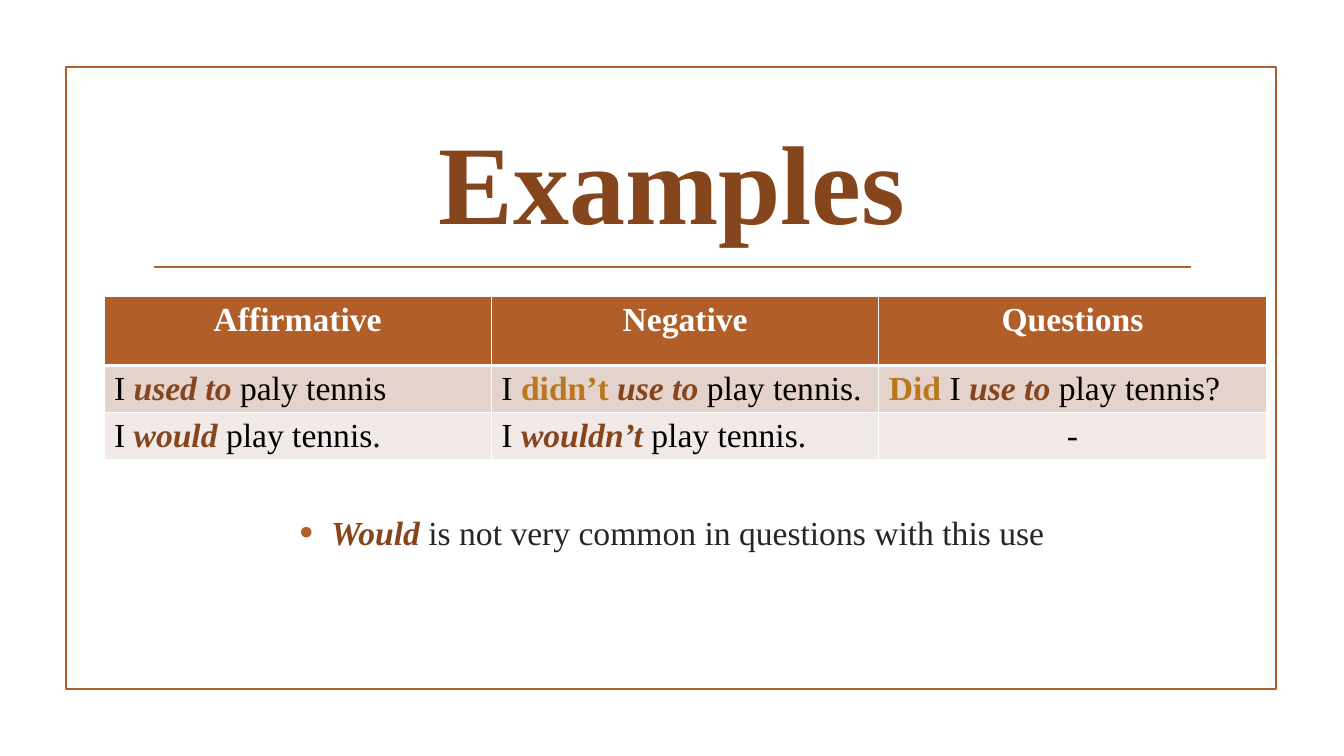
from dataclasses import dataclass

from lxml.etree import SubElement
from pptx import Presentation
from pptx.dml.color import RGBColor
from pptx.enum.shapes import MSO_CONNECTOR, MSO_SHAPE
from pptx.enum.text import MSO_ANCHOR, PP_ALIGN
from pptx.oxml.ns import qn
from pptx.util import Emu, Pt


@dataclass(frozen=True)
class Theme:
    """Colours, font and sizes of the slide."""
    accent: str = "B15E28"
    verb: str = "85461E"
    auxiliary: str = "BA781E"
    plain: str = "000000"
    note: str = "262626"
    white: str = "FFFFFF"
    bands: tuple = ("E4D2CD", "F2EAE8")
    font: str = "Times New Roman"
    title_size: int = 80
    text_size: int = 24
    line_width: float = 1.25
    border_width: int = 1
    header_border_width: int = 3


THEME = Theme()
PLAIN = (THEME.plain, False, False)
VERB = (THEME.verb, True, True)
AUXILIARY = (THEME.auxiliary, True, False)
NOTE = (THEME.note, False, False)

HEADINGS = ("Affirmative", "Negative", "Questions")
EXAMPLES = (
    (
        (("I ", PLAIN), ("used to ", VERB), ("paly tennis", PLAIN)),
        (("I ", PLAIN), ("didn’t ", AUXILIARY), ("use to ", VERB), ("play tennis.", PLAIN)),
        (("Did", AUXILIARY), (" I ", PLAIN), ("use to ", VERB), ("play tennis?", PLAIN)),
    ),
    (
        (("I ", PLAIN), ("would", VERB), (" play tennis.", PLAIN)),
        (("I", PLAIN), (" wouldn’t ", VERB), ("play tennis.", PLAIN)),
        (("-", PLAIN),),
    ),
)
REMARK = (("Would", VERB), (" is not very common in questions with this use", NOTE))


def px(length):
    """Turn px into EMU."""
    return Emu(length * 9525)


def rgb(code):
    """Return the colour for a hex code."""
    return RGBColor.from_string(code)


def set_font(paragraph, size, color=None, bold=None):
    """Set the font shared by a whole paragraph."""
    paragraph.font.name = THEME.font
    paragraph.font.size = Pt(size)
    paragraph.font.bold = bold
    if color:
        paragraph.font.color.rgb = rgb(color)


def write_phrases(paragraph, phrases):
    """Write phrases with their own colour, weight and slant."""
    set_font(paragraph, THEME.text_size)
    for words, (color, bold, italic) in phrases:
        run = paragraph.add_run()
        run.text = words
        run.font.color.rgb = rgb(color)
        run.font.bold = bold
        run.font.italic = italic


def add_bullet(paragraph, indent):
    """Give a paragraph a hanging accent bullet."""
    properties = paragraph._p.get_or_add_pPr()
    properties.set("marL", str(px(indent)))
    properties.set("indent", str(-px(indent)))
    bullet_color = SubElement(properties, qn("a:buClr"))
    SubElement(bullet_color, qn("a:srgbClr"), val=THEME.accent)
    SubElement(properties, qn("a:buSzPct"), val="115000")
    SubElement(properties, qn("a:buFont"), typeface="Arial")
    SubElement(properties, qn("a:buChar"), char="•")


def style_cell(cell, fill, top, bottom):
    """Set the borders and the fill of a table cell."""
    properties = cell._tc.get_or_add_tcPr()
    side = THEME.border_width
    for tag, width in (("a:lnL", side), ("a:lnR", side), ("a:lnT", top), ("a:lnB", bottom)):
        border = SubElement(properties, qn(tag), w=str(Pt(width)))
        border_fill = SubElement(border, qn("a:solidFill"))
        SubElement(border_fill, qn("a:srgbClr"), val=THEME.white)
    cell.fill.solid()
    cell.fill.fore_color.rgb = rgb(fill)


def draw_frame(slide, left, top, width, height):
    """Draw the border and the rule under the title."""
    frame = slide.shapes.add_shape(
        MSO_SHAPE.RECTANGLE, px(left), px(top), px(width), px(height))
    frame.shadow.inherit = False
    frame.fill.background()
    rule_y = px(top + 190)
    rule = slide.shapes.add_connector(
        MSO_CONNECTOR.STRAIGHT, px(left + 84), rule_y, px(left + width - 81), rule_y)
    SubElement(rule._element.spPr, qn("a:effectLst"))
    for outline in (frame.line, rule.line):
        outline.color.rgb = rgb(THEME.accent)
        outline.width = Pt(THEME.line_width)


def draw_title(slide, left, top, width, height):
    """Write the centred title."""
    title = slide.shapes.add_textbox(px(left), px(top), px(width), px(height)).text_frame
    title.word_wrap = True
    title.vertical_anchor = MSO_ANCHOR.MIDDLE
    heading = title.paragraphs[0]
    heading.text = "Examples"
    heading.alignment = PP_ALIGN.CENTER
    set_font(heading, THEME.title_size, THEME.verb, True)


def draw_examples(slide, left, top, width, header_height, row_height):
    """Draw the table of example sentences."""
    height = header_height + row_height * len(EXAMPLES)
    examples = slide.shapes.add_table(
        len(EXAMPLES) + 1, len(HEADINGS), px(left), px(top), px(width), px(height)).table
    thin, thick = THEME.border_width, THEME.header_border_width
    examples.rows[0].height = px(header_height)
    for column, heading in enumerate(HEADINGS):
        cell = examples.cell(0, column)
        style_cell(cell, THEME.accent, thin, thick)
        paragraph = cell.text_frame.paragraphs[0]
        paragraph.text = heading
        paragraph.alignment = PP_ALIGN.CENTER
        set_font(paragraph, THEME.text_size, THEME.white, True)
    for row, (sentences, band) in enumerate(zip(EXAMPLES, THEME.bands), 1):
        examples.rows[row].height = px(row_height)
        for column, phrases in enumerate(sentences):
            cell = examples.cell(row, column)
            style_cell(cell, band, thick if row == 1 else thin, thin)
            paragraph = cell.text_frame.paragraphs[0]
            if len(phrases) == 1:
                paragraph.alignment = PP_ALIGN.CENTER
            write_phrases(paragraph, phrases)


def draw_remark(slide, left, top, width, height):
    """Write the bulleted remark below the table."""
    remark = slide.shapes.add_textbox(px(left), px(top), px(width), px(height)).text_frame
    remark.word_wrap = True
    paragraph = remark.paragraphs[0]
    paragraph.alignment = PP_ALIGN.CENTER
    add_bullet(paragraph, 30)
    write_phrases(paragraph, REMARK)


def main():
    """Build and save the slide."""
    presentation = Presentation()
    presentation.slide_width = px(1280)
    presentation.slide_height = px(720)
    slide = presentation.slides.add_slide(presentation.slide_layouts[6])
    draw_frame(slide, 63, 64, 1152, 592)
    draw_examples(slide, 99, 282, 1107, 66, 39)
    draw_title(slide, 136, 103, 1008, 137)
    draw_remark(slide, 136, 483, 1008, 48)
    presentation.save("out.pptx")


if __name__ == "__main__":
    main()
